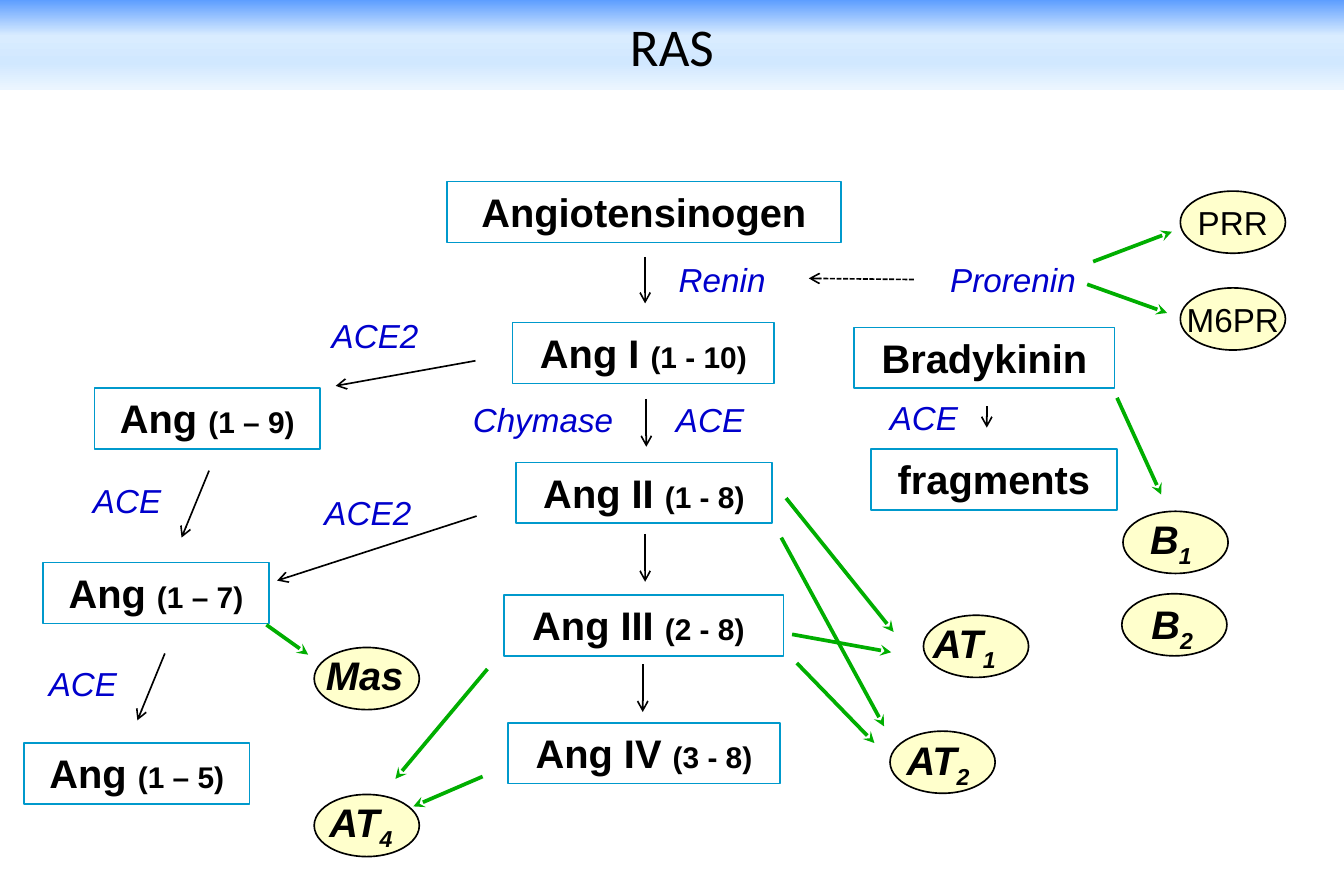
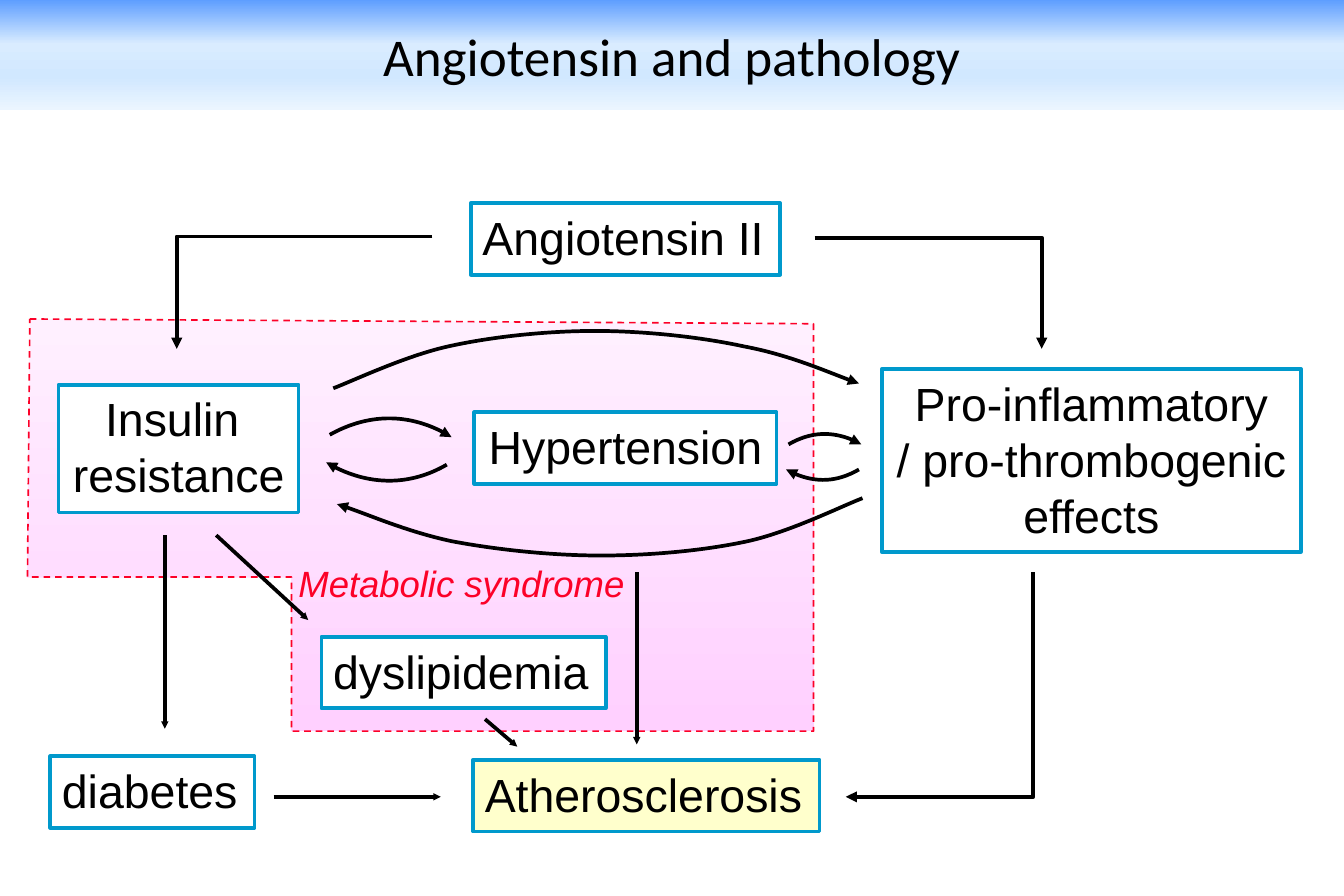
from lxml.etree import SubElement
from pptx import Presentation
from pptx.dml.color import RGBColor
from pptx.enum.dml import MSO_LINE as Dash
from pptx.enum.shapes import MSO_CONNECTOR as Link, MSO_SHAPE as Form
from pptx.enum.text import MSO_ANCHOR as Anchor, MSO_AUTO_SIZE as Fit, PP_ALIGN as Align
from pptx.oxml.ns import qn
from pptx.util import Inches, Pt

BLACK, WHITE, BLUE, NAVY = "000000", "FFFFFF", "0099CC", "0000CC"
GREEN, CREAM, RED = "00AE00", "FFFFCC", "FC0128"
BAND = [(0, "5E9EFF"), (40, "D9ECFF"), (70, "D1E8FF"), (100, "EBF5FF")]
PINK = [(0, "FFF0FF"), (100, "FFD0FF")]


def paint(item, fill=None, line=None, width=1, dash=None, head=None, size="med"):
    """Set fill (hex, list of gradient stops or None), line and arrowhead; drop the shadow."""
    props = item.element.spPr
    if isinstance(fill, list):
        item.fill.gradient()
        item.fill.gradient_angle = 270
        stops = props.find(".//" + qn("a:gsLst"))
        for old in list(stops):
            stops.remove(old)
        for pos, tint in fill:
            stop = SubElement(stops, qn("a:gs"), pos=str(pos * 1000))
            SubElement(stop, qn("a:srgbClr"), val=tint)
    elif fill:
        item.fill.solid()
        item.fill.fore_color.rgb = RGBColor.from_string(fill)
    elif hasattr(item, "fill"):
        item.fill.background()
    if line:
        item.line.color.rgb = RGBColor.from_string(line)
        item.line.width = Pt(width)
        if dash:
            item.line.dash_style = dash
        if head:
            SubElement(item.get_or_add_ln(), qn("a:tailEnd"), type=head, w=size, len=size)
    else:
        item.line.fill.background()
    SubElement(props, qn("a:effectLst"))


def write(item, paras, size, color=BLACK, font="Arial", bold=False, italic=False,
          align=Align.CENTER, anchor=Anchor.TOP, wrap=False, fit=Fit.SHAPE_TO_FIT_TEXT):
    """Fill item with paragraphs; each is a list of (text, size or None, lowered) runs."""
    frame = item.text_frame
    frame.word_wrap, frame.auto_size, frame.vertical_anchor = wrap, fit, anchor
    for i, runs in enumerate(paras):
        para = frame.add_paragraph() if i else frame.paragraphs[0]
        para.alignment = align
        for text, own, low in runs:
            run = para.add_run()
            run.text = text
            run.font.name, run.font.size = font, Pt(own or size)
            run.font.bold, run.font.italic = bold, italic
            run.font.color.rgb = RGBColor.from_string(color)
            if low:
                run.font.element.set("baseline", "-25000") if hasattr(run.font, "element") \
                    else run._r.get_or_add_rPr().set("baseline", "-25000")


deck = Presentation()
deck.slide_width, deck.slide_height = Inches(11.25), Inches(7.5)

pages = []
for title, high in [("RAS", 0.75), ("Angiotensin and pathology", 0.92)]:
    page = deck.slides.add_slide(deck.slide_layouts[6]).shapes
    band = page.add_shape(Form.RECTANGLE, 0, 0, deck.slide_width, Inches(high))
    paint(band, BAND)
    write(band, [[(title, None, False)]], 32, font="Calibri",
          anchor=Anchor.MIDDLE, wrap=True, fit=Fit.NONE)
    pages.append(page)
ras, path_map = pages

# Slide 1: peptides
peptides = [
    (3.74, 1.52, 3.3, "Angiotensinogen", "", ""),
    (4.29, 2.7, 2.19, "Ang I ", "(1 - 10)", ""),
    (4.32, 3.87, 2.14, "Ang II ", "(1 - 8)", ""),
    (4.22, 4.98, 2.34, "Ang III ", "(2 - 8)", " "),
    (4.25, 6.05, 2.28, "Ang IV ", "(3 - 8)", ""),
    (0.79, 3.25, 1.89, "Ang ", "(1 – 9)", ""),
    (0.36, 4.71, 1.89, "Ang ", "(1 – 7)", ""),
    (0.2, 6.22, 1.89, "Ang ", "(1 – 5)", ""),
    (7.15, 2.74, 2.18, "Bradykinin", "", ""),
    (7.29, 3.76, 2.06, "fragments", "", ""),
]
for x, y, w, name, span, end in peptides:
    box = ras.add_shape(Form.RECTANGLE, Inches(x), Inches(y), Inches(w), Inches(0.51))
    paint(box, WHITE, BLUE)
    runs = [(name, 24, False), (span, 18, False), (end, 24, False)]
    write(box, [[run for run in runs if run[0]]], 24, bold=True)

# Receptors: oval place, then label place and width
receptors = [
    (7.73, 5.15, 7.71, 5.13, 0.87, "AT", "1"),
    (7.45, 6.12, 7.49, 6.11, 0.87, "AT", "2"),
    (2.63, 6.65, 2.66, 6.63, 0.87, "AT", "4"),
    (2.63, 5.42, 2.63, 5.4, 0.96, "Mas", ""),
    (9.4, 4.28, 9.53, 4.26, 0.64, "B", "1"),
    (9.39, 4.97, 9.54, 4.97, 0.64, "B", "2"),
    (9.88, 1.6, None, None, None, "PRR", ""),
    (9.88, 2.41, None, None, None, "M6PR", ""),
]
for x, y, left, top, w, name, sub in receptors:
    oval = ras.add_shape(Form.OVAL, Inches(x), Inches(y), Inches(0.88), Inches(0.52))
    paint(oval, CREAM, BLACK)
    if left is None:
        write(oval, [[(name, None, False)]], 20, anchor=Anchor.MIDDLE, fit=Fit.NONE)
        continue
    label = ras.add_textbox(Inches(left), Inches(top), Inches(w), Inches(0.5))
    runs = [(name, None, False)] + ([(sub, None, True)] if sub else [])
    write(label, [runs], 24, bold=True, italic=True, align=Align.LEFT)

enzymes = [
    (5.52, 2.12, 1.05, "Renin"), (7.85, 2.12, 1.26, "Prorenin"),
    (3.84, 3.29, 1.41, "Chymase"), (5.51, 3.29, 0.87, "ACE"),
    (7.3, 3.28, 0.87, "ACE"), (0.63, 3.97, 0.87, "ACE"), (0.26, 5.5, 0.87, "ACE"),
    (2.62, 2.59, 1.04, "ACE2"), (2.56, 4.07, 1.04, "ACE2"),
]
for x, y, w, name in enzymes:
    label = ras.add_textbox(Inches(x), Inches(y), Inches(w), Inches(0.43))
    write(label, [[(name, None, False)]], 20, NAVY, italic=True)

steps = [
    (5.4, 2.15, 5.4, 2.54), (5.41, 3.34, 5.41, 3.74), (5.4, 4.47, 5.4, 4.87),
    (5.38, 5.56, 5.38, 5.96), (3.98, 3.02, 2.81, 3.23), (3.99, 4.32, 2.32, 4.86),
    (1.75, 3.94, 1.52, 4.5), (1.38, 5.47, 1.15, 6.03), (8.26, 3.4, 8.26, 3.58),
]
dashed = [(7.65, 2.34, 6.77, 2.33)]
bonds = [
    (4.04, 6.5, 3.46, 6.75), (4.08, 5.6, 3.31, 6.52), (6.54, 4.5, 7.4, 6.08),
    (6.63, 5.31, 7.46, 5.46), (6.67, 5.55, 7.32, 6.22), (6.58, 4.17, 7.48, 5.29),
    (2.23, 5.23, 2.58, 5.48), (9.35, 3.33, 9.72, 4.14), (9.1, 2.38, 9.77, 2.62),
    (9.15, 2.19, 9.81, 1.94),
]
causes = [
    (1.81, 4.48, 2.58, 5.19), (1.38, 4.48, 1.38, 6.1), (2.29, 6.67, 3.69, 6.67),
    (4.06, 6.02, 4.33, 6.25), (5.33, 4.79, 5.33, 6.23),
]

# Slide 2: shaded region behind everything but the band
region = [(0.25, 2.67), (6.81, 2.71), (6.81, 6.12), (2.44, 6.12), (2.44, 4.83), (0.23, 4.83)]
dots = [(Inches(x), Inches(y)) for x, y in region]
pen = path_map.build_freeform(*dots[0])
pen.add_line_segments(dots[1:], close=True)
paint(pen.convert_to_shape(), PINK, RED, dash=Dash.DASH)

# Straight arrows of both slides
for page, lines, look in [
    (ras, steps, dict(line=BLACK, head="arrow")),
    (ras, dashed, dict(line=BLACK, head="arrow", dash=Dash.SQUARE_DOT)),
    (ras, bonds, dict(line=GREEN, width=2.25, head="stealth")),
    (path_map, causes, dict(line=BLACK, width=2.25, head="triangle", size="sm")),
]:
    for ends in lines:
        paint(page.add_connector(Link.STRAIGHT, *[Inches(v) for v in ends]), **look)

states = [
    (3.94, 1.7, 2.59, 0.6, WHITE, Align.LEFT, ["Angiotensin II"]),
    (3.96, 6.36, 2.9, 0.6, CREAM, Align.LEFT, ["Atherosclerosis"]),
    (0.49, 3.22, 2.01, 1.07, WHITE, Align.CENTER, ["Insulin ", "resistance"]),
    (3.97, 3.45, 2.53, 0.6, WHITE, Align.CENTER, ["Hypertension"]),
    (0.42, 6.33, 1.71, 0.6, WHITE, Align.LEFT, ["diabetes"]),
    (2.69, 5.33, 2.38, 0.6, WHITE, Align.LEFT, ["dyslipidemia"]),
    (7.38, 3.09, 3.51, 1.53, WHITE, Align.CENTER,
     ["Pro-inflammatory", "/ pro-thrombogenic", "effects"]),
]
for x, y, w, h, fill, align, rows in states:
    box = path_map.add_shape(Form.RECTANGLE, Inches(x), Inches(y), Inches(w), Inches(h))
    paint(box, fill, BLUE, 2.25)
    write(box, [[(row, None, False)] for row in rows], 28, align=align)

elbows = [
    [(3.62, 1.98), (1.48, 1.98), (1.48, 2.92)],
    [(6.82, 1.99), (8.72, 1.99), (8.72, 2.92)],
    [(8.65, 4.79), (8.65, 6.67), (7.08, 6.67)],
]
# Each curve: a start, then two control points and an end per piece
curves = [
    [(6.6, 3.72), (6.79, 3.61), (7.03, 3.61), (7.21, 3.72)],
    [(7.19, 3.93), (7, 4.04), (6.77, 4.04), (6.58, 3.93)],
    [(2.76, 3.64), (3.08, 3.46), (3.47, 3.46), (3.78, 3.66)],
    [(3.74, 3.89), (3.43, 4.07), (3.04, 4.06), (2.73, 3.87)],
    [(2.79, 3.25), (2.95, 3.19), (3.39, 2.98), (3.75, 2.9), (4.11, 2.82), (4.57, 2.77),
     (4.98, 2.77), (5.39, 2.77), (5.86, 2.82), (6.23, 2.9), (6.6, 2.97), (6.99, 3.14),
     (7.19, 3.21)],
    [(7.22, 4.17), (7.06, 4.23), (6.62, 4.45), (6.26, 4.53), (5.89, 4.61), (5.44, 4.65),
     (5.03, 4.65), (4.61, 4.65), (4.15, 4.6), (3.78, 4.53), (3.41, 4.45), (3.02, 4.28),
     (2.82, 4.22)],
]
for route in elbows + curves:
    dots = [(Inches(x), Inches(y)) for x, y in route]
    pen = path_map.build_freeform(*dots[0])
    pen.add_line_segments(dots[1:], close=False)
    arrow = pen.convert_to_shape()
    paint(arrow, None, BLACK, 2.25, head="triangle")
    if route in curves:
        trace = arrow.element.find(".//" + qn("a:path"))
        legs = trace.findall(qn("a:lnTo"))
        for i in range(0, len(legs), 3):
            bend = SubElement(trace, qn("a:cubicBezTo"))
            for leg in legs[i:i + 3]:
                bend.append(leg[0])
                trace.remove(leg)

label = path_map.add_textbox(Inches(2.4), Inches(4.65), Inches(2.94), Inches(0.47))
write(label, [[("Metabolic syndrome", None, False)]], 22, RED, italic=True, align=Align.LEFT)

deck.save("out.pptx")
